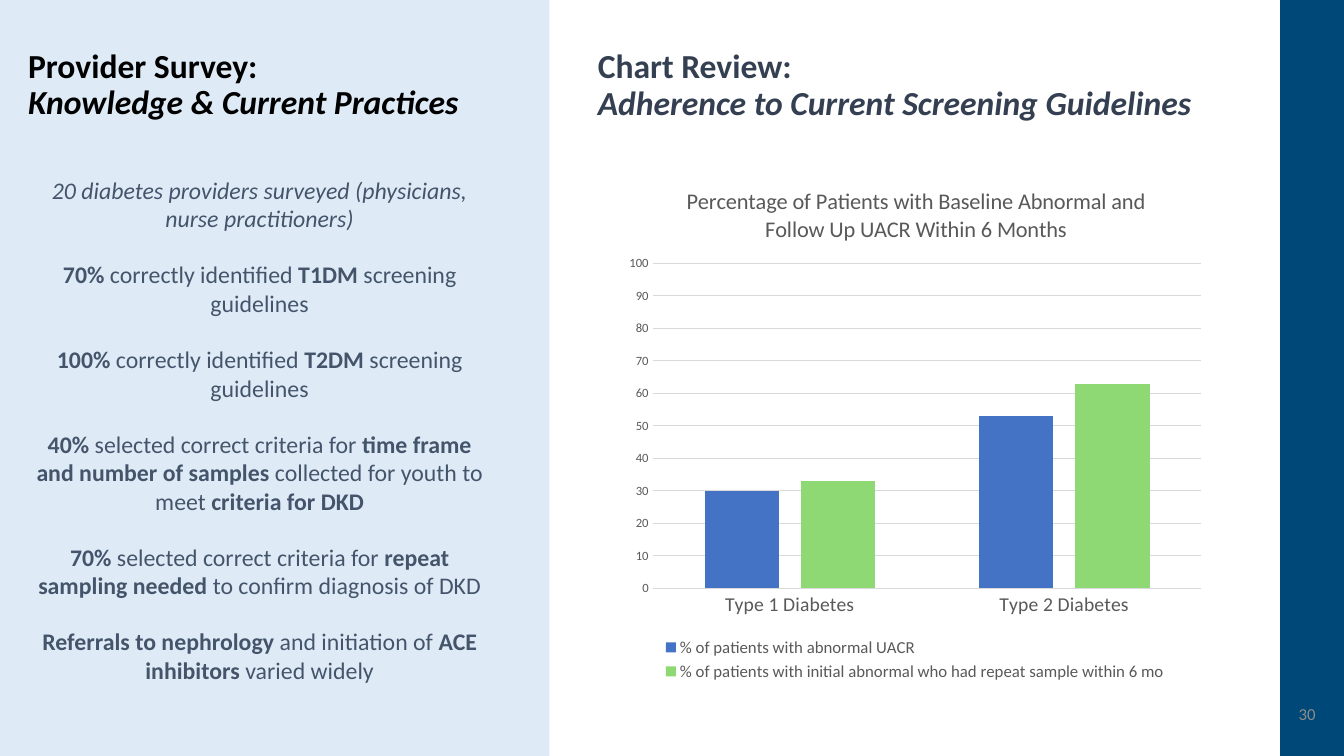
import pptx
import pptx.util
import pptx.chart.data
import pptx.dml.color
import pptx.enum.chart
import pptx.enum.shapes
import pptx.enum.text
import pptx.oxml

Pt = pptx.util.Pt
Align = pptx.enum.text.PP_ALIGN
Anchor = pptx.enum.text.MSO_ANCHOR
COLORS = {
    "navy": "004877", "pale": "DEEBF7", "black": "000000", "slate": "44546A",
    "heading": "344051", "gray": "595959", "grid": "D9D9D9", "number": "8C8C8C",
    "blue": "4472C4", "green": "8ED973",
}
RGB = {name: pptx.dml.color.RGBColor.from_string(value) for name, value in COLORS.items()}


def style(font, size, color, bold=False, italic=False):
    font.name = "Calibri"
    font.size = Pt(size)
    font.color.rgb = RGB[color]
    font.bold = bold
    font.italic = italic


def prepare(box, left, top, width, height, anchor, insets):
    box.left, box.top, box.width, box.height = Pt(left), Pt(top), Pt(width), Pt(height)
    frame = box.text_frame
    frame.word_wrap = True
    frame.auto_size = pptx.enum.text.MSO_AUTO_SIZE.NONE
    frame.vertical_anchor = anchor
    frame.margin_left = frame.margin_right = Pt(insets[0])
    frame.margin_top = frame.margin_bottom = Pt(insets[1])
    return frame


deck = pptx.Presentation()
deck.slide_width, deck.slide_height = Pt(960), Pt(540)
page = deck.slides.add_slide(deck.slide_layouts[5])

# Right-hand strip
strip = page.shapes.add_shape(
    pptx.enum.shapes.MSO_SHAPE.RECTANGLE, Pt(914.4), 0, Pt(45.6), Pt(540))
strip.shadow.inherit = False
strip.fill.solid()
strip.fill.fore_color.rgb = RGB["navy"]
strip.line.fill.background()

# Headings: the title fills the left panel
title = page.shapes.title
title.fill.solid()
title.fill.fore_color.rgb = RGB["pale"]
chart_heading = page.shapes.add_textbox(0, 0, 0, 0)
headings = [
    (prepare(title, 0, 0, 392.4, 540, Anchor.TOP, (20, 35)), "black",
     "Provider Survey:", "Knowledge & Current Practices"),
    (prepare(chart_heading, 417.6, 28.8, 473, 65.5, Anchor.MIDDLE, (9.4, 9.4)), "heading",
     "Chart Review:", "Adherence to Current Screening Guidelines"),
]
for frame, color, topic, subject in headings:
    para = frame.paragraphs[0]
    para.alignment = Align.LEFT
    para.line_spacing = 0.9
    span = para.add_run()
    span.text = topic
    style(span.font, 24, color, bold=True)
    para.add_line_break()
    span = para.add_run()
    span.text = subject
    style(span.font, 24, color, bold=True, italic=True)

# Survey findings: each span is (text, bold)
findings = [
    [("20 diabetes providers\u00a0surveyed (physicians, nurse practitioners)", False)],
    [("70% ", True), ("correctly identified ", False), ("T1DM", True),
     (" screening guidelines", False)],
    [("100%", True), (" correctly identified ", False), ("T2DM", True),
     (" screening guidelines", False)],
    [("40%", True), (" selected correct criteria for ", False),
     ("time frame and number of samples", True),
     (" collected for youth to meet ", False), ("criteria for DKD", True)],
    [("70% ", True), ("selected correct criteria for ", False),
     ("repeat sampling needed ", True), ("to confirm diagnosis of DKD", False)],
    [("Referrals to nephrology", True), (" and initiation of ", False),
     ("ACE inhibitors", True), (" varied widely", False)],
]
survey = page.shapes.add_textbox(0, 0, 0, 0)
frame = prepare(survey, 18, 116, 335, 441, Anchor.TOP, (7, 9.4))
for index, finding in enumerate(findings):
    para = frame.paragraphs[0] if index == 0 else frame.add_paragraph()
    para.alignment = Align.CENTER
    if index:
        para.space_before = Pt(19.6)
    for text, bold in finding:
        span = para.add_run()
        span.text = text
        style(span.font, 17, "slate", bold=bold, italic=index == 0)

# Chart
data = pptx.chart.data.CategoryChartData()
data.categories = ["Type 1 Diabetes", "Type 2 Diabetes"]
data.add_series("% of patients with abnormal UACR", [30, 53])
data.add_series(
    "% of patients with initial abnormal who had repeat sample within 6 mo", [33, 63])
chart = page.shapes.add_chart(
    pptx.enum.chart.XL_CHART_TYPE.COLUMN_CLUSTERED,
    Pt(440.6), Pt(115.2), Pt(426.2), Pt(374.4), data).chart
style(chart.font, 10, "black")

chart.has_title = True
chart_title = chart.chart_title
span = chart_title.text_frame.paragraphs[0].add_run()
span.text = "Percentage of Patients with Baseline Abnormal and Follow Up UACR Within 6 Months"
style(span.font, 16, "gray")
chart_title.include_in_layout = False

plot = chart.plots[0]
plot.gap_width = 140
plot.overlap = -30
plot.vary_by_categories = False
for series, color in zip(plot.series, ("blue", "green")):
    series.format.fill.solid()
    series.format.fill.fore_color.rgb = RGB[color]

for axis, size in ((chart.category_axis, 14), (chart.value_axis, 9)):
    style(axis.tick_labels.font, size, "gray")
    axis.major_tick_mark = axis.minor_tick_mark = pptx.enum.chart.XL_TICK_MARK.NONE
chart.value_axis.minimum_scale = 0
chart.value_axis.maximum_scale = 100
chart.value_axis.major_unit = 10
chart.value_axis.has_major_gridlines = True
chart.value_axis.format.line.fill.background()
for line in (chart.category_axis.format.line, chart.value_axis.major_gridlines.format.line):
    line.color.rgb = RGB["grid"]
    line.width = Pt(0.75)

chart.has_legend = True
chart.legend.position = pptx.enum.chart.XL_LEGEND_POSITION.BOTTOM
chart.legend.include_in_layout = False
style(chart.legend.font, 12, "gray")

# Fixed places for the chart title and the plot, as shares of the chart
namespace = "http://schemas.openxmlformats.org/drawingml/2006/chart"
title_element = chart_title._element
plot_element = chart._chartSpace.chart.plotArea
places = [
    (title_element, 1, {"xMode": "edge", "yMode": "edge", "x": 0.11, "y": 0.04}),
    (plot_element, 0, {"layoutTarget": "inner", "xMode": "edge", "yMode": "edge",
                       "x": 0.06, "y": 0.195, "w": 0.92, "h": 0.62}),
]
for element, position, settings in places:
    for old in element.findall(f"{{{namespace}}}layout"):
        element.remove(old)
    values = "".join(f'<c:{key} val="{value}"/>' for key, value in settings.items())
    element.insert(position, pptx.oxml.parse_xml(
        f'<c:layout xmlns:c="{namespace}"><c:manualLayout>{values}</c:manualLayout></c:layout>'))

# Slide number
number = page.shapes.add_textbox(0, 0, 0, 0)
frame = prepare(number, 889.2, 489.6, 57.6, 41, Anchor.MIDDLE, (7.2, 7.2))
para = frame.paragraphs[0]
para.alignment = Align.RIGHT
span = para.add_run()
span.text = "30"
style(span.font, 12, "number")

deck.save("out.pptx")
